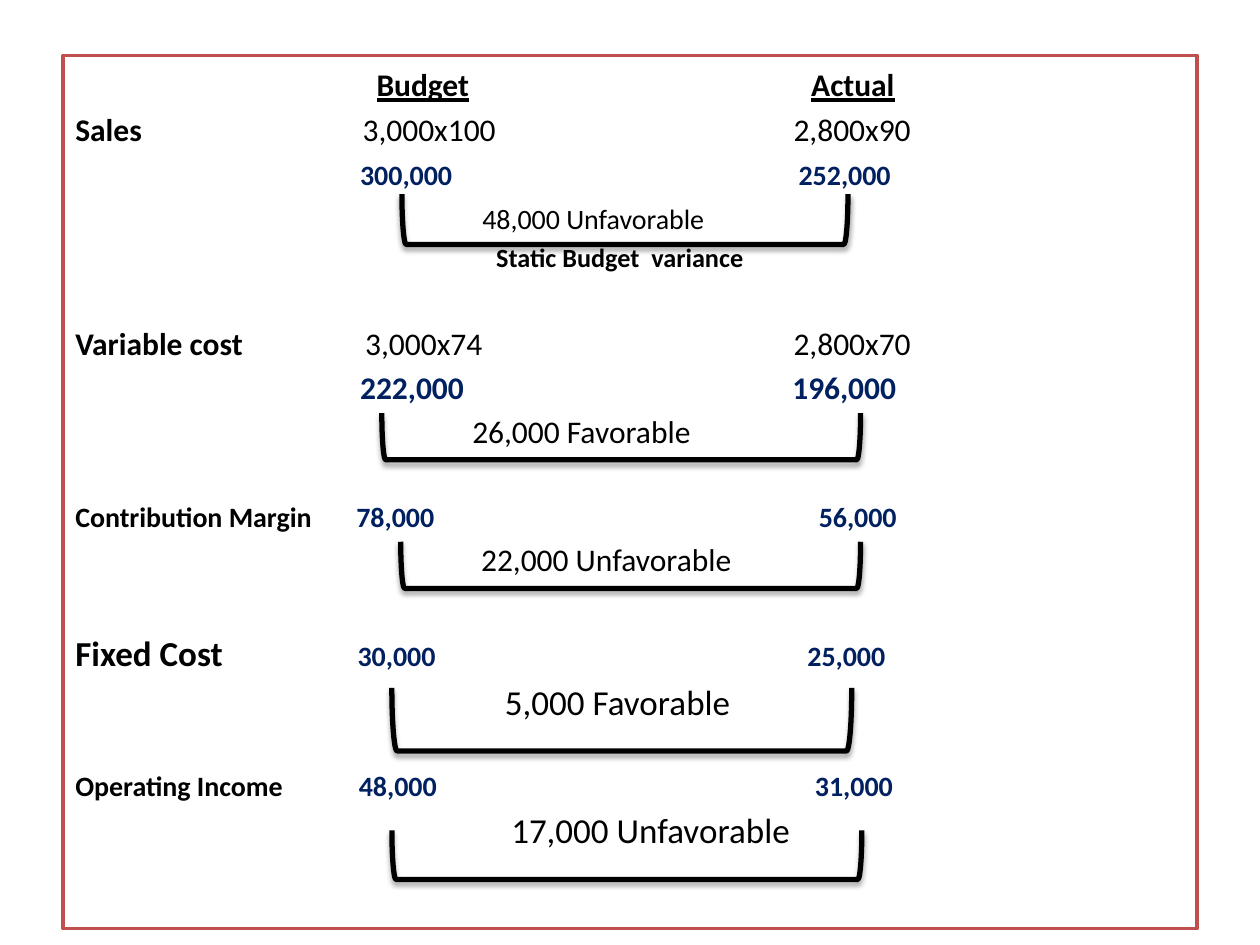
from lxml.etree import SubElement
from pptx import Presentation
from pptx.dml.color import RGBColor
from pptx.enum.shapes import MSO_SHAPE
from pptx.enum.text import MSO_ANCHOR, MSO_AUTO_SIZE, PP_ALIGN
from pptx.oxml import parse_xml
from pptx.oxml.ns import qn
from pptx.util import Inches, Pt

BLACK, NAVY, RED, WHITE = "000000", "002060", "C0504D", "FFFFFF"
STYLES = {
    "label": (BLACK, {"bold": True, "underline": False}),
    "head": (BLACK, {"bold": True, "underline": True}),
    "plain": (BLACK, {"bold": False, "underline": False}),
    "total": (NAVY, {"bold": True, "underline": False}),
}
# gap before, line size, label, cell size, cell style, (tab inches, text) cells
ROWS = [
    (4, 20, "", 18, "head", [(2.39, "Budget"), (5.84, "Actual")]),
    (3.6, 18, "Sales", 18, "plain", [(2.28, "3,000x100"), (5.7, "2,800x90")]),
    (3.6, 18, "", 16, "total", [(2.26, "300,000"), (5.74, "252,000")]),
    (3.6, 18, "", 16, "plain", [(3.23, "48,000 Unfavorable")]),
    (3, 15, "", 15, "label", [(3.34, "Static Budget  variance")]),
    (29.2, 18, "Variable cost", 18, "plain", [(2.3, "3,000x74"), (5.7, "2,800x70")]),
    (3.6, 18, "", 18, "total", [(2.26, "222,000"), (5.69, "196,000")]),
    (3.6, 18, "", 18, "plain", [(3.15, "26,000 Favorable")]),
    (28.5, 16, "Contribution Margin", 16, "total", [(2.23, "78,000"), (5.9, "56,000")]),
    (3.6, 18, "", 18, "plain", [(3.22, "22,000 Unfavorable")]),
    (31, 20, "Fixed Cost", 16, "total", [(2.24, "30,000"), (5.81, "25,000")]),
    (4, 20, "", 20, "plain", [(3.41, "5,000 Favorable")]),
    (26, 16, "Operating Income", 16, "total", [(2.25, "48,000"), (5.87, "31,000")]),
    (4, 20, "", 20, "plain", [(3.46, "17,000 Unfavorable")]),
]
BRACKETS = [
    (3.19, 1.54, 3.54, 0.4),
    (3.03, 3.28, 3.8, 0.37),
    (3.18, 4.3, 3.65, 0.37),
    (3.11, 5.46, 3.65, 0.5),
    (3.11, 6.59, 3.73, 0.39),
]
SHADOW = (
    '<a:effectLst xmlns:a="http://schemas.openxmlformats.org/drawingml/2006/main">'
    '<a:outerShdw blurRad="39370" dist="22860" dir="5400000" rotWithShape="0">'
    '<a:srgbClr val="000000"><a:alpha val="35000"/></a:srgbClr>'
    "</a:outerShdw></a:effectLst>"
)


def color(code):
    """Turn a hex string into a colour."""
    return RGBColor.from_string(code)


def add_run(para, text, size, style):
    """Add one run of text in a named style."""
    run = para.add_run()
    run.text = text
    code, values = STYLES[style]
    run.font.color.rgb = color(code)
    for key, value in {"name": "Calibri", "size": Pt(size), **values}.items():
        setattr(run.font, key, value)


def set_tabs(para, stops):
    """Set left tab stops in inches."""
    tabs = SubElement(para._p.get_or_add_pPr(), qn("a:tabLst"))
    for stop in stops:
        SubElement(tabs, qn("a:tab"), pos=str(int(Inches(stop))), algn="l")


def add_row(para, gap, lead, label, size, style, cells):
    """Fill one paragraph with a label and its tabbed cells."""
    para.space_before = Pt(gap)
    para.alignment = PP_ALIGN.LEFT
    set_tabs(para, [stop for stop, _ in cells])
    for index, (_, text) in enumerate(cells):
        add_run(para, (label if index == 0 else "") + "\t", lead, "label")
        add_run(para, text, size, style)


def add_report(slide, left, top, width, height):
    """Place the framed box and write the variance rows in it."""
    body = slide.shapes.add_textbox(
        Inches(left), Inches(top), Inches(width), Inches(height)
    )
    body.fill.solid()
    body.fill.fore_color.rgb = color(WHITE)
    body.line.color.rgb = color(RED)
    body.line.width = Pt(2)
    frame = body.text_frame
    frame.word_wrap = True
    frame.auto_size = MSO_AUTO_SIZE.NONE
    frame.vertical_anchor = MSO_ANCHOR.TOP
    for index, row in enumerate(ROWS):
        para = frame.add_paragraph() if index else frame.paragraphs[0]
        add_row(para, *row)


def add_bracket(slide, left, top, width, height):
    """Draw a bracket that opens upward and fills the given box."""
    shift = (width - height) / 2
    shape = slide.shapes.add_shape(
        MSO_SHAPE.RIGHT_BRACKET,
        Inches(left + shift), Inches(top - shift), Inches(height), Inches(width),
    )
    shape.rotation = 90
    shape.fill.background()
    shape.line.color.rgb = color(BLACK)
    shape.line.width = Pt(3)
    shape._element.spPr.append(parse_xml(SHADOW))


def main():
    """Build the variance slide."""
    deck = Presentation()
    deck.slide_width, deck.slide_height = Inches(10), Inches(7.5)
    slide = deck.slides.add_slide(deck.slide_layouts[6])
    add_report(slide, 0.5, 0.44, 9, 6.93)
    for box in BRACKETS:
        add_bracket(slide, *box)
    deck.save("out.pptx")


if __name__ == "__main__":
    main()
